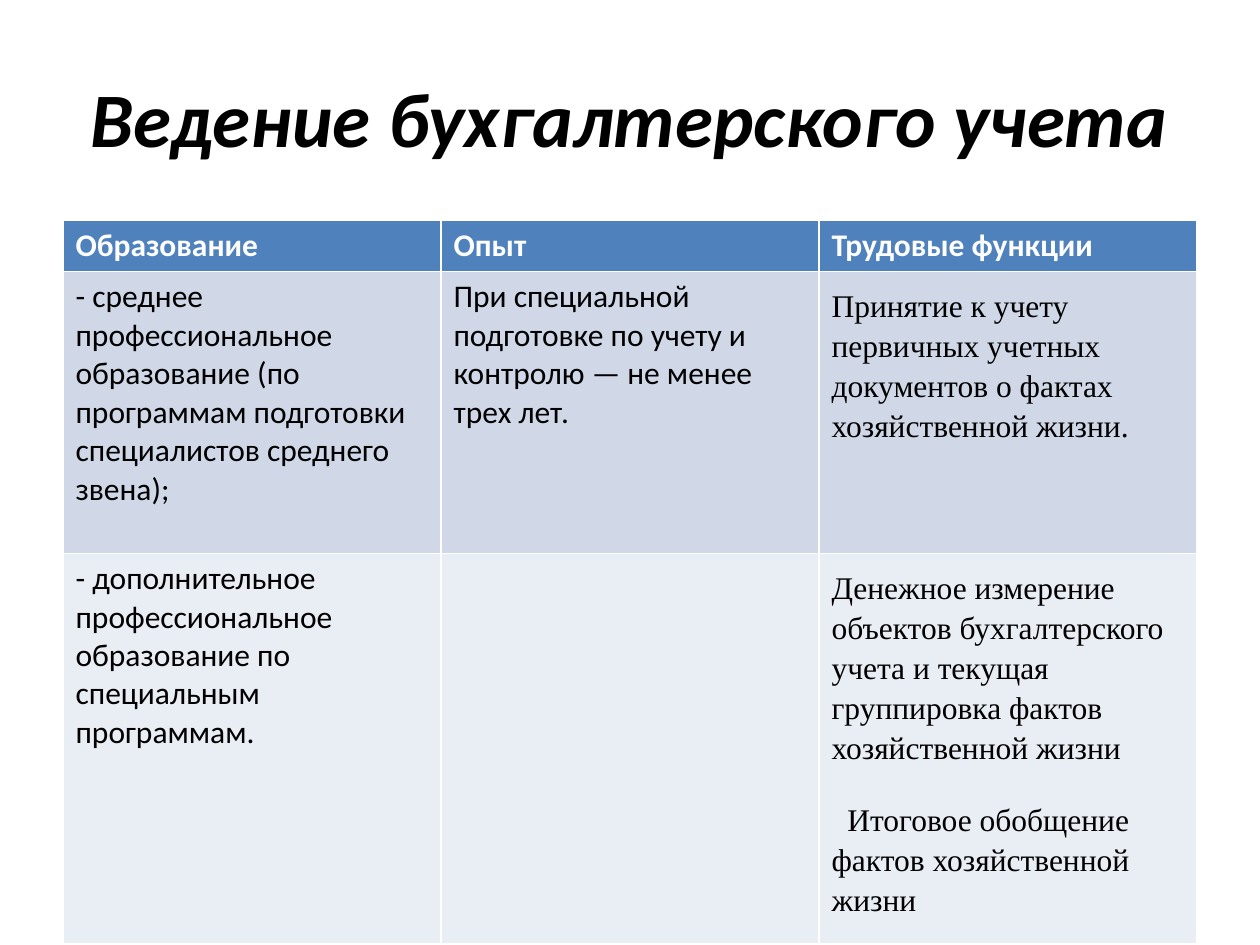
from dataclasses import dataclass

from pptx import Presentation
from pptx import util as u
from pptx.dml import color
from pptx.enum import text as t

BODY_FONT = "Calibri"
SERIF_FONT = "Times New Roman"
HEADER_BLUE, BAND_DARK, BAND_LIGHT = "4F81BD", "D0D8E8", "E9EDF4"
SIDE_INSET = 7.2


@dataclass
class Requirement:
    """One body row: education, experience and job functions."""
    education: str
    experience: str
    functions: list[str]
    band: str
    height: float


HEADINGS = ["Образование", "Опыт", "Трудовые функции"]
REQUIREMENTS = [
    Requirement(
        "- среднее профессиональное образование (по программам подготовки "
        "специалистов среднего звена);",
        "При специальной подготовке по учету и контролю — не менее трех лет.",
        ["Принятие к учету первичных учетных документов о фактах "
         "хозяйственной жизни."],
        BAND_DARK, 161),
    Requirement(
        "- дополнительное профессиональное образование по специальным программам.",
        "",
        ["Денежное измерение объектов бухгалтерского учета и текущая "
         "группировка фактов хозяйственной жизни",
         "Итоговое обобщение фактов хозяйственной жизни"],
        BAND_LIGHT, 223),
]


def rgb(value: str) -> color.RGBColor:
    return color.RGBColor.from_string(value)


def write(frame, lines: list[str], *, size: float = 18, font: str = BODY_FONT,
          ink: str = "000000", bold: bool = False, italic: bool = False,
          align=t.PP_ALIGN.LEFT, line_spacing: float = 1.0,
          before: float = 0, after: float = 0) -> None:
    """Fill a text frame with one formatted paragraph per line."""
    for index, line in enumerate(lines):
        paragraph = frame.paragraphs[0] if index == 0 else frame.add_paragraph()
        paragraph.alignment = align
        paragraph.line_spacing = line_spacing
        paragraph.space_before, paragraph.space_after = u.Pt(before), u.Pt(after)
        paragraph.font.size = u.Pt(size)
        if not line:
            continue
        run = paragraph.add_run()
        run.text = line
        run.font.size, run.font.name = u.Pt(size), font
        run.font.bold, run.font.italic = bold, italic
        run.font.color.rgb = rgb(ink)


def fill_cell(cell, lines: list[str], background: str, inset: float = 3.6,
              **style) -> None:
    cell.fill.solid()
    cell.fill.fore_color.rgb = rgb(background)
    cell.margin_left = cell.margin_right = u.Pt(SIDE_INSET)
    cell.margin_top = cell.margin_bottom = u.Pt(inset)
    write(cell.text_frame, lines, **style)


def add_title(slide, wording: str) -> None:
    title = slide.shapes.title
    title.left, title.top = u.Pt(36), u.Pt(21.6)
    title.width, title.height = u.Pt(648), u.Pt(90)
    title.text_frame.vertical_anchor = t.MSO_ANCHOR.MIDDLE
    write(title.text_frame, [wording], size=44, bold=True, italic=True,
          align=t.PP_ALIGN.CENTER)


def add_requirements(slide) -> None:
    heights = [29.2] + [row.height for row in REQUIREMENTS]
    table = slide.shapes.add_table(
        len(heights), len(HEADINGS), u.Pt(36), u.Pt(126),
        u.Pt(648), u.Pt(sum(heights))).table
    for row, height in zip(table.rows, heights):
        row.height = u.Pt(height)

    # Header row
    for column, heading in enumerate(HEADINGS):
        fill_cell(table.cell(0, column), [heading], HEADER_BLUE,
                  ink="FFFFFF", bold=True)

    # Body rows
    for number, entry in enumerate(REQUIREMENTS, start=1):
        fill_cell(table.cell(number, 0), [entry.education], entry.band)
        fill_cell(table.cell(number, 1), [entry.experience], entry.band)
        fill_cell(table.cell(number, 2), entry.functions, entry.band,
                  inset=SIDE_INSET, font=SERIF_FONT, line_spacing=1.15,
                  before=7.5, after=10.5)

    # The closing function starts with a first-line indent
    closing = table.cell(len(REQUIREMENTS), 2).text_frame.paragraphs[-1]
    properties = closing._p.get_or_add_pPr()
    properties.set("marL", "0")
    properties.set("indent", str(u.Pt(9)))


def main() -> None:
    deck = Presentation()
    deck.slide_width, deck.slide_height = u.Pt(720), u.Pt(540)
    slide = deck.slides.add_slide(deck.slide_layouts[5])
    add_title(slide, "Ведение бухгалтерского учета")
    add_requirements(slide)
    deck.save("out.pptx")


if __name__ == "__main__":
    main()
